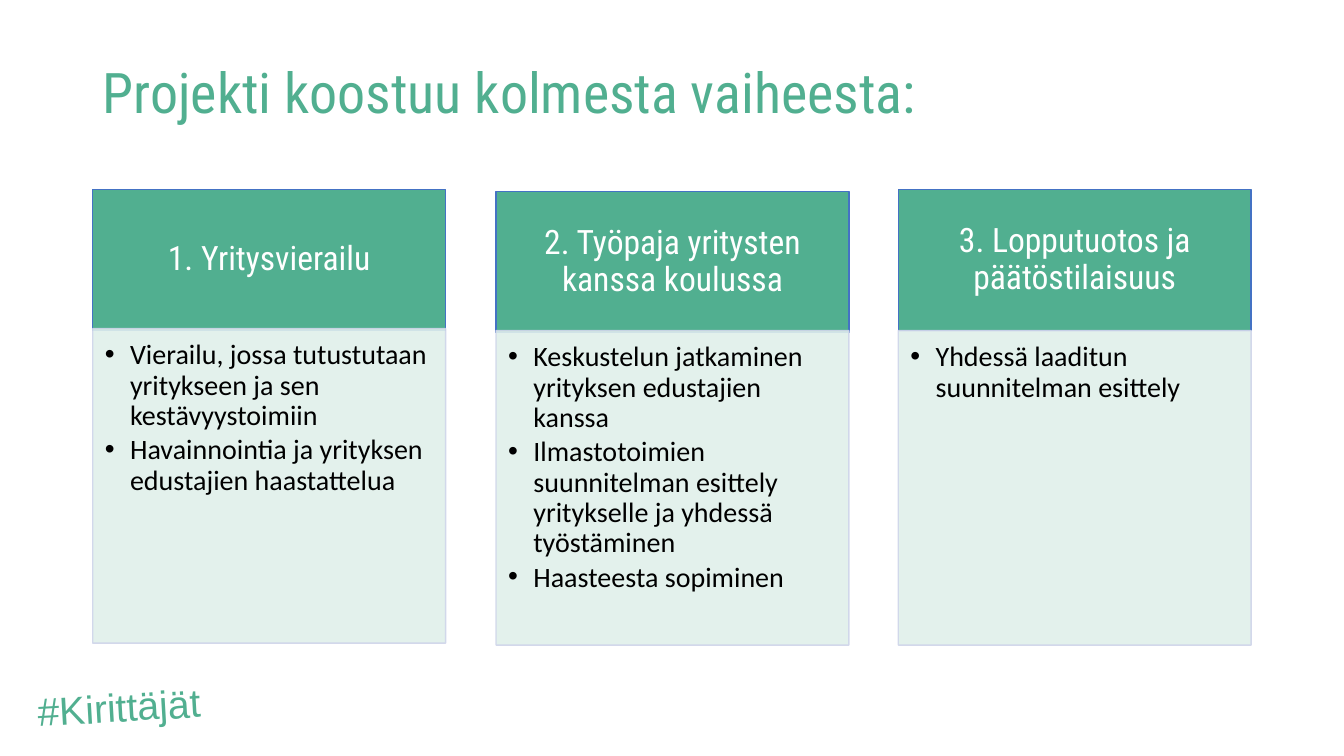
"""Build a slide that shows the three phases of a school project."""
from dataclasses import dataclass
from pptx import Presentation
from pptx.dml.color import RGBColor as RGB
from pptx.enum.shapes import MSO_SHAPE as Shape
from pptx.enum.text import MSO_ANCHOR as Anchor, MSO_AUTO_SIZE as Fit, PP_ALIGN as Align
from pptx.oxml.ns import qn
from pptx.util import Inches, Pt
from lxml.etree import SubElement as Sub


@dataclass(frozen=True)
class Theme:
    green: RGB = RGB(0x51, 0xAF, 0x90)
    blue: RGB = RGB(0x44, 0x72, 0xC4)
    pale: RGB = RGB(0xE0, 0xF0, 0xEB)
    edge: RGB = RGB(0xCF, 0xD5, 0xEA)
    white: RGB = RGB(0xFF, 0xFF, 0xFF)
    black: RGB = RGB(0, 0, 0)
    head: str = "Roboto Condensed"
    body: str = "Calibri"
    tag: str = "Arial"
    title_pt: int = 40
    tag_pt: int = 28
    head_pt: int = 24
    body_pt: int = 20


THEME = Theme()
LEFT, STEP, WIDTH = 0.92, 3.995, 3.5
PHASES = [
    (1.88, 3.26, "1. Yritysvierailu", [
        "Vierailu, jossa tutustutaan yritykseen ja sen kestävyystoimiin",
        "Havainnointia ja yrityksen edustajien haastattelua"]),
    (1.9, 3.28, "2. Työpaja yritysten kanssa koulussa", [
        "Keskustelun jatkaminen yrityksen edustajien kanssa",
        "Ilmastotoimien suunnitelman esittely yritykselle ja yhdessä työstäminen",
        "Haasteesta sopiminen"]),
    (1.88, 3.28, "3. Lopputuotos ja päätöstilaisuus", [
        "Yhdessä laaditun suunnitelman esittely"]),
]


def style(para, face, size, color):
    para.font.name = face
    para.font.size = Pt(size)
    para.font.color.rgb = color


def place(shape, left, top, width, height):
    shape.left, shape.top = Inches(left), Inches(top)
    shape.width, shape.height = Inches(width), Inches(height)


def pad(frame, left, top, right, bottom):
    frame.margin_left, frame.margin_top = Inches(left), Inches(top)
    frame.margin_right, frame.margin_bottom = Inches(right), Inches(bottom)


def fade(shape, share):
    for color in shape._element.spPr.iter(qn("a:srgbClr")):
        Sub(color, qn("a:alpha"), val=str(share * 1000))


def bullet(para):
    props = para._p.get_or_add_pPr()
    props.set("marL", str(Inches(0.25)))
    props.set("indent", str(-Inches(0.25)))
    Sub(props, qn("a:buFont"), typeface="Arial")
    Sub(props, qn("a:buChar"), char="•")


def add_box(slide, left, top, height, fill, line):
    box = slide.shapes.add_shape(
        Shape.RECTANGLE, Inches(left), Inches(top), Inches(WIDTH), Inches(height))
    box.shadow.inherit = False
    box.fill.solid()
    box.fill.fore_color.rgb = fill
    box.line.color.rgb = line
    box.line.width = Pt(1)
    box.text_frame.word_wrap = True
    return box


def add_head(slide, left, top, text):
    box = add_box(slide, left, top, 1.4, THEME.green, THEME.blue)
    frame = box.text_frame
    frame.vertical_anchor = Anchor.MIDDLE
    pad(frame, 0.19, 0.11, 0.19, 0.11)
    para = frame.paragraphs[0]
    para.text = text
    para.alignment = Align.CENTER
    para.line_spacing = 0.9
    style(para, THEME.head, THEME.head_pt, THEME.white)


def add_list(slide, left, top, items):
    box = add_box(slide, left, top, 3.12, THEME.pale, THEME.edge)
    fade(box, 90)
    frame = box.text_frame
    frame.vertical_anchor = Anchor.TOP
    pad(frame, 0.12, 0.12, 0.16, 0.17)
    for i, item in enumerate(items):
        para = frame.add_paragraph() if i else frame.paragraphs[0]
        para.text = item
        bullet(para)
        para.level = 1
        para.alignment = Align.LEFT
        para.line_spacing = 0.9
        para.space_after = Pt(3)
        style(para, THEME.body, THEME.body_pt, THEME.black)


def set_title(slide, text):
    title = slide.shapes.title
    place(title, LEFT, 0.4, 11.5, 1.09)
    frame = title.text_frame
    frame.text = text
    frame.auto_size = Fit.NONE
    frame.vertical_anchor = Anchor.MIDDLE
    para = frame.paragraphs[0]
    para.alignment = Align.LEFT
    para.line_spacing = 0.9
    style(para, THEME.head, THEME.title_pt, THEME.green)


def add_tag(slide, text):
    box = slide.shapes.add_textbox(Inches(0.27), Inches(6.7), Inches(2.69), Inches(0.57))
    box.rotation = 356.7
    box.text_frame.word_wrap = True
    para = box.text_frame.paragraphs[0]
    para.text = text
    style(para, THEME.tag, THEME.tag_pt, THEME.green)


def main():
    deck = Presentation()
    deck.slide_width, deck.slide_height = Inches(13.33), Inches(7.5)
    slide = deck.slides.add_slide(deck.slide_layouts[5])
    add_tag(slide, "#Kirittäjät")
    set_title(slide, "Projekti koostuu kolmesta vaiheesta:")
    for i, (top, base, name, items) in enumerate(PHASES):
        left = round(LEFT + i * STEP, 2)
        add_head(slide, left, top, name)
        add_list(slide, left, base, items)
    deck.save("out.pptx")


if __name__ == "__main__":
    main()
